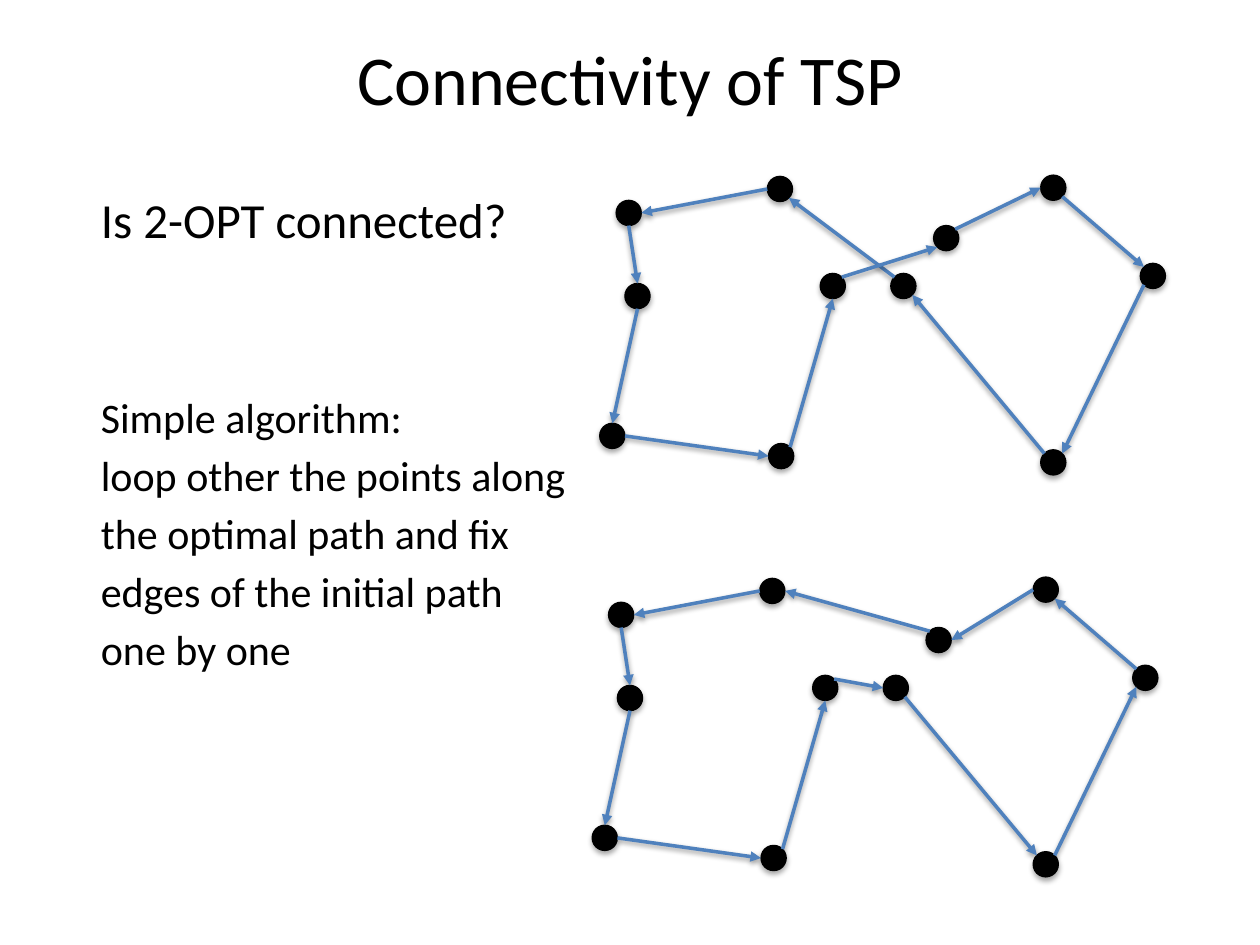
from math import cos, radians, sin

from lxml.etree import SubElement
from pptx import Presentation
from pptx.dml.color import RGBColor
from pptx.enum.shapes import MSO_CONNECTOR, MSO_SHAPE
from pptx.enum.text import MSO_ANCHOR, MSO_AUTO_SIZE, PP_ALIGN
from pptx.oxml.ns import qn
from pptx.util import Inches, Pt

COLORS = {"text": "000000", "city": "000000", "edge": "4F81BD", "shadow": "000000"}
FONT = "Calibri"
RADIUS = 0.1

# City centres of the upper tour, in inches
CITIES = {
    "north": (6.19, 1.5), "west": (5.06, 2.35), "inner_left": (6.61, 2.27),
    "southwest": (4.86, 3.46), "south": (6.2, 3.62), "northwest": (4.99, 1.69),
    "inner_right": (7.17, 2.27), "hill": (7.51, 1.89), "northeast": (8.36, 1.49),
    "east": (9.15, 2.19), "southeast": (8.36, 3.67),
}

# Edges: start city, angle on its rim, end city, angle on its rim
# (degrees, clockwise from the right)
SHARED_EDGES = [
    ("west", 90, "southwest", 270),
    ("northwest", 90, "west", 270),
    ("north", 180, "northwest", 0),
    ("south", 315, "inner_left", 90),
    ("southwest", 0, "south", 180),
]
CROSSED_EDGES = [
    ("inner_right", 225, "north", 45),
    ("northeast", 45, "east", 225),
    ("east", 135, "southeast", 315),
    ("southeast", 225, "inner_right", 45),
    ("hill", 315, "northeast", 180),
    ("inner_left", 315, "hill", 135),
]
FIXED_EDGES = [
    ("hill", 225, "north", 0),
    ("east", 225, "northeast", 45),
    ("southeast", 315, "east", 135),
    ("northeast", 180, "hill", 0),
    ("inner_right", 45, "southeast", 225),
    ("inner_left", 315, "inner_right", 180),
]

# Body lines: text, size, space before in points
BODY_LINES = [
    ("Is 2-OPT connected?", 28, 0),
    ("Simple algorithm:", 24, 82),
    ("loop other the points along", 24, 4.3),
    ("the optimal path and fix", 24, 4.3),
    ("edges of the initial path", 24, 4.3),
    ("one by one", 24, 4.3),
]


def rgb(role):
    return RGBColor.from_string(COLORS[role])


def place(element, left, top, width, height):
    element.left, element.top = Inches(left), Inches(top)
    element.width, element.height = Inches(width), Inches(height)


def write(paragraph, text, size, color="text", align=PP_ALIGN.LEFT, before=0):
    run = paragraph.add_run()
    run.text = text
    run.font.name, run.font.size = FONT, Pt(size)
    run.font.color.rgb = rgb(color)
    paragraph.alignment = align
    paragraph.space_before = Pt(before)


def add_shadow(element, opacity, distance):
    effects = SubElement(element._element.spPr, qn("a:effectLst"))
    shadow = SubElement(effects, qn("a:outerShdw"), blurRad=str(Pt(3.1)),
                        dist=str(Pt(distance)), dir="5400000", rotWithShape="0")
    color = SubElement(shadow, qn("a:srgbClr"), val=COLORS["shadow"])
    SubElement(color, qn("a:alpha"), val=str(opacity * 1000))


def add_city(group, x, y):
    city = group.shapes.add_shape(MSO_SHAPE.OVAL, Inches(x - RADIUS), Inches(y - RADIUS),
                                  Inches(2 * RADIUS), Inches(2 * RADIUS))
    city.fill.solid()
    city.fill.fore_color.rgb = rgb("city")
    city.line.color.rgb = rgb("city")
    city.line.width = Pt(0.75)
    add_shadow(city, opacity=35, distance=1.8)


def rim_point(center, angle):
    x, y = center
    return (Inches(x + RADIUS * cos(radians(angle))),
            Inches(y + RADIUS * sin(radians(angle))))


def add_edge(group, start, end):
    edge = group.shapes.add_connector(MSO_CONNECTOR.STRAIGHT, *start, *end)
    edge.line.color.rgb = rgb("edge")
    edge.line.width = Pt(2)
    SubElement(edge.line._get_or_add_ln(), qn("a:tailEnd"), type="triangle")
    add_shadow(edge, opacity=38, distance=1.6)


def add_tour(slide, edges, dx=0, dy=0):
    group = slide.shapes.add_group_shape()
    cities = {name: (x + dx, y + dy) for name, (x, y) in CITIES.items()}
    for center in cities.values():
        add_city(group, *center)
    for start, start_angle, end, end_angle in edges:
        add_edge(group, rim_point(cities[start], start_angle),
                 rim_point(cities[end], end_angle))


def fill_title(title):
    place(title, 0.5, 0.26, 9, 0.71)
    title.text_frame.auto_size = MSO_AUTO_SIZE.NONE
    title.text_frame.vertical_anchor = MSO_ANCHOR.MIDDLE
    write(title.text_frame.paragraphs[0], "Connectivity of TSP", 40, align=PP_ALIGN.CENTER)


def fill_body(body):
    place(body, 0.2, 1.45, 9.49, 5.68)
    frame = body.text_frame
    frame.auto_size = MSO_AUTO_SIZE.NONE
    for index, (text, size, before) in enumerate(BODY_LINES):
        paragraph = frame.add_paragraph() if index else frame.paragraphs[0]
        write(paragraph, text, size, before=before)
        # Indented, without a bullet
        paragraph.level = 1
        properties = paragraph._p.get_or_add_pPr()
        properties.set("marL", str(Inches(0.5)))
        properties.set("indent", "0")
        SubElement(properties, qn("a:buNone"))


def main():
    presentation = Presentation()
    presentation.slide_width, presentation.slide_height = Inches(10), Inches(7.5)
    slide = presentation.slides.add_slide(presentation.slide_layouts[1])

    # Title and text
    fill_title(slide.shapes.title)
    fill_body(slide.placeholders[1])

    # Tour with crossing edges above, fixed tour below
    add_tour(slide, SHARED_EDGES + CROSSED_EDGES)
    add_tour(slide, SHARED_EDGES + FIXED_EDGES, dx=-0.06, dy=3.19)

    presentation.save("out.pptx")


if __name__ == "__main__":
    main()
